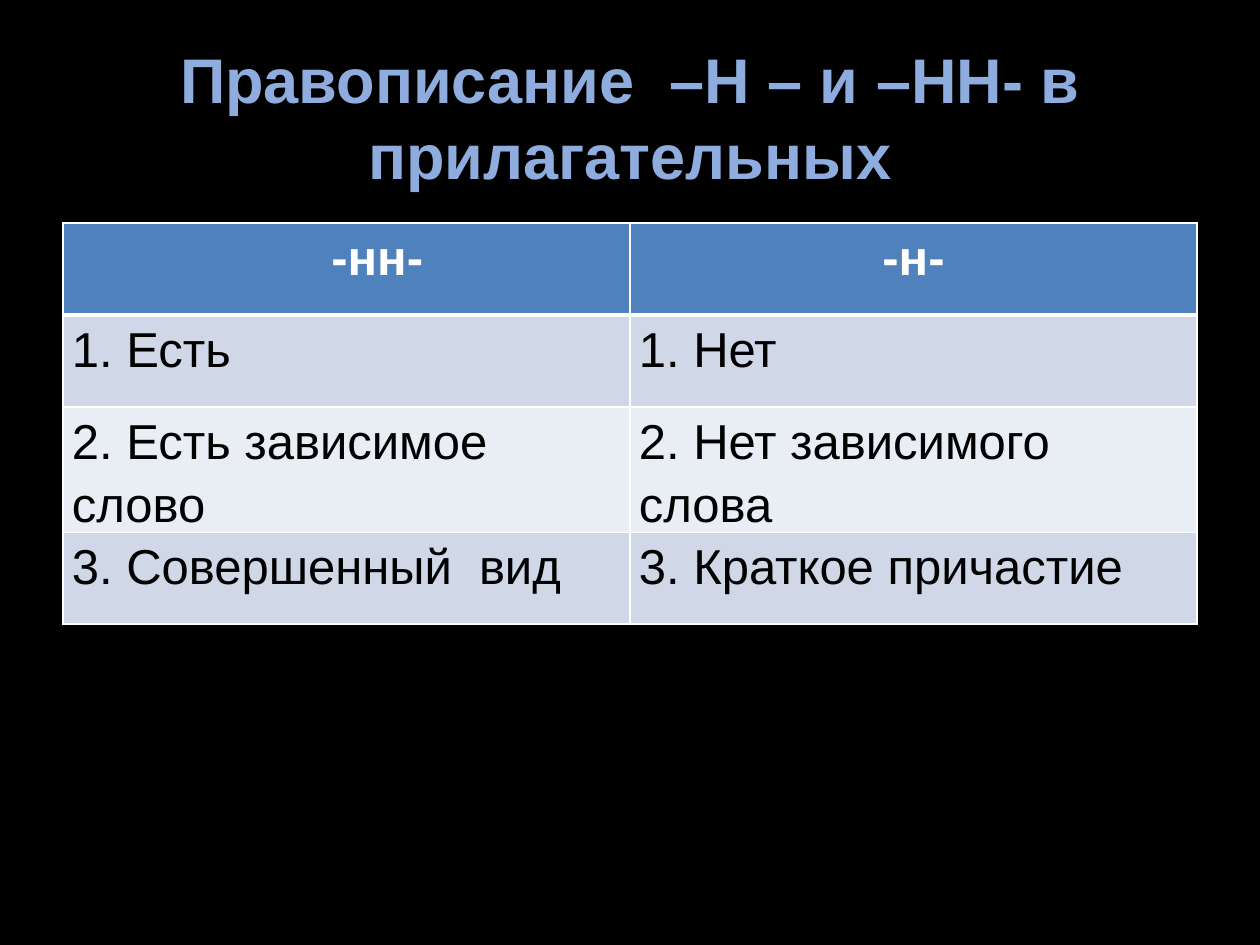
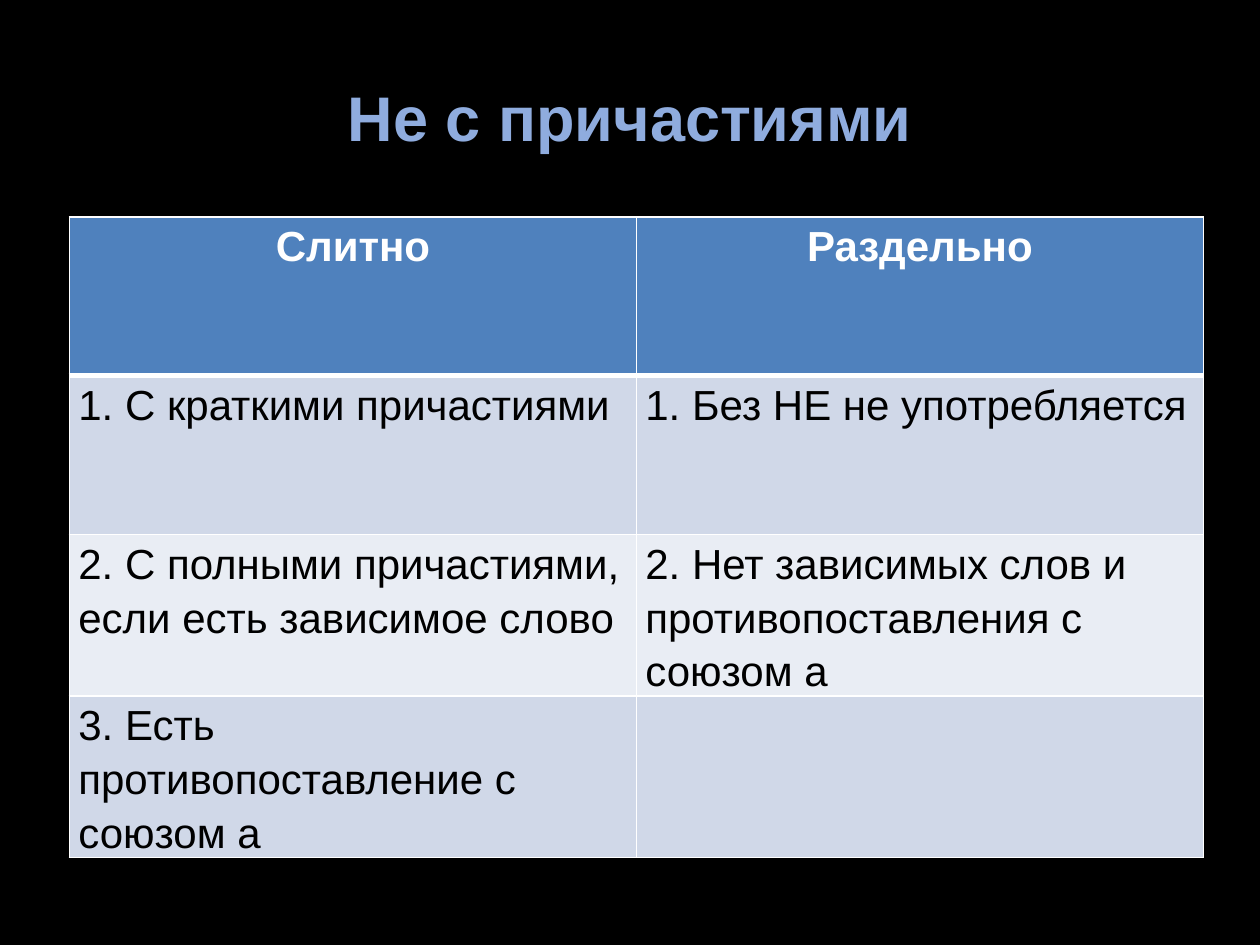
from lxml import etree
from pptx import Presentation
from pptx import util as u
from pptx.dml.color import RGBColor
from pptx.enum import text as t
from pptx.oxml.ns import qn

COLORS = {
    "background": "000000",
    "title": "8FACDE",
    "header": "4F81BD",
    "odd_row": "D0D8E8",
    "even_row": "E9EDF4",
    "light": "FFFFFF",
    "dark": "000000",
}
FONT = "Arial"
COLUMN_WIDTH = u.Cm(11.43)
THIN, THICK = u.Pt(1), u.Pt(3)

RULES = [
    {
        "title": "Правописание  –Н – и –НН- в прилагательных",
        "left": 1.27, "top": 4.5, "row_height": 1.85, "size": 28,
        "header_indent": [1.24, 0],
        "rows": [
            ("-нн-", "-н-"),
            ("1. Есть", "1. Нет"),
            ("2. Есть зависимое слово", "2. Нет зависимого слова"),
            ("3. Совершенный  вид", "3. Краткое причастие"),
        ],
    },
    {
        "title": "Не с причастиями",
        "left": 1.4, "top": 4.37, "row_height": 3.2, "size": 24,
        "header_indent": [0, 0],
        "rows": [
            ("Слитно", "Раздельно"),
            ("1. С краткими причастиями", "1. Без НЕ не употребляется"),
            ("2. С полными причастиями, если есть зависимое слово",
             "2. Нет зависимых слов и противопоставления с союзом а"),
            ("3. Есть противопоставление с союзом а", ""),
        ],
    },
]


def write_text(frame, text, size, color, bold=False, align=t.PP_ALIGN.LEFT,
               spacing=None, indent=0):
    """Fill a text frame with one paragraph; indent is its first line, in cm."""
    frame.word_wrap = True
    para = frame.paragraphs[0]
    para.alignment = align
    if spacing:
        para.line_spacing = spacing
    if indent:
        para._p.get_or_add_pPr().set("indent", str(u.Cm(indent)))
    if not text:
        return
    span = para.add_run()
    span.text = text
    span.font.name = FONT
    span.font.size = u.Pt(size)
    span.font.bold = bold
    span.font.color.rgb = RGBColor.from_string(COLORS[color])


def add_borders(cell, top, bottom):
    properties = cell._tc.get_or_add_tcPr()
    widths = {"lnL": THIN, "lnR": THIN, "lnT": top, "lnB": bottom}
    for side, width in widths.items():
        line = etree.SubElement(properties, qn(f"a:{side}"), w=str(width))
        fill = etree.SubElement(line, qn("a:solidFill"))
        etree.SubElement(fill, qn("a:srgbClr"), val=COLORS["light"])


deck = Presentation()
deck.slide_width, deck.slide_height = u.Cm(25.4), u.Cm(19.05)
background = deck.slide_master.background.fill
background.solid()
background.fore_color.rgb = RGBColor.from_string(COLORS["background"])
title_only = deck.slide_layouts[5]

for rule in RULES:
    page = deck.slides.add_slide(title_only)
    title = page.shapes.title
    title.left, title.top = u.Cm(1.27), u.Cm(0.76)
    title.width, title.height = u.Cm(22.86), u.Cm(3.18)
    title.text_frame.vertical_anchor = t.MSO_ANCHOR.MIDDLE
    title.text_frame.auto_size = t.MSO_AUTO_SIZE.NONE
    write_text(title.text_frame, rule["title"], size=36, color="title",
               bold=True, align=t.PP_ALIGN.CENTER)

    rows = rule["rows"]
    row_height = u.Cm(rule["row_height"])
    table = page.shapes.add_table(
        len(rows), 2, u.Cm(rule["left"]), u.Cm(rule["top"]),
        2 * COLUMN_WIDTH, len(rows) * row_height).table

    for row_index, row in enumerate(rows):
        table.rows[row_index].height = row_height
        is_header = row_index == 0
        if is_header:
            fill_name = "header"
        else:
            fill_name = "odd_row" if row_index % 2 else "even_row"

        for column_index, text in enumerate(row):
            cell = table.cell(row_index, column_index)
            cell.margin_left = cell.margin_right = u.Cm(0.18)
            cell.margin_top = cell.margin_bottom = 0
            add_borders(cell, top=THICK if row_index == 1 else THIN,
                        bottom=THICK if is_header else THIN)
            cell.fill.solid()
            cell.fill.fore_color.rgb = RGBColor.from_string(COLORS[fill_name])
            write_text(
                cell.text_frame, text, size=rule["size"],
                color="light" if is_header else "dark", bold=is_header,
                align=t.PP_ALIGN.CENTER if is_header else t.PP_ALIGN.LEFT,
                spacing=1.15,
                indent=rule["header_indent"][column_index] if is_header else 0)

deck.save("out.pptx")
